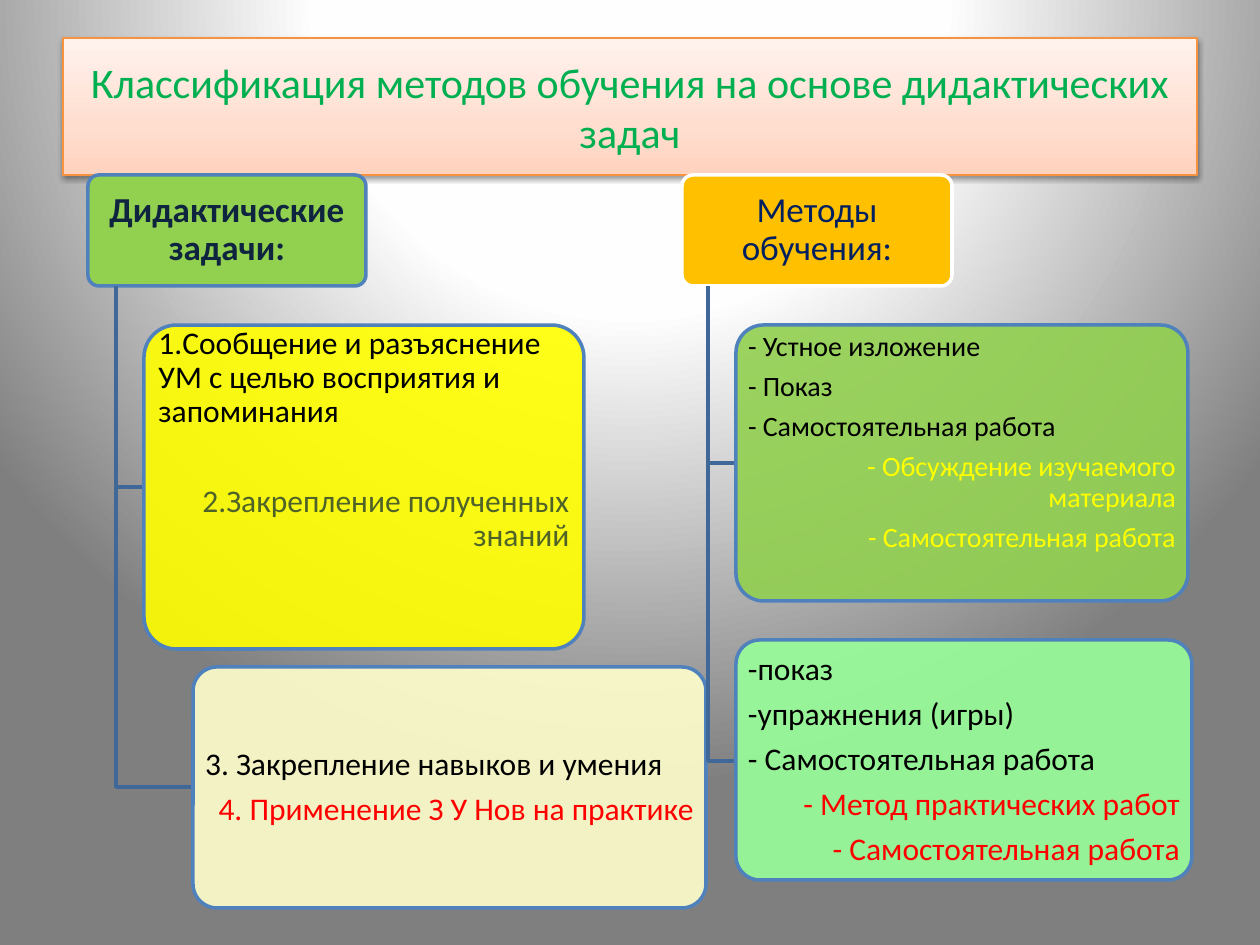
"""Build a slide that sorts teaching methods by didactic task."""
import pptx
import pptx.util
from lxml import etree
from pptx.dml.color import RGBColor
from pptx.enum.shapes import MSO_SHAPE
from pptx.enum.text import MSO_ANCHOR, PP_ALIGN
from pptx.oxml import parse_xml
from pptx.oxml.ns import qn

SCALE = 914400 / 126
NS = 'xmlns:a="http://schemas.openxmlformats.org/drawingml/2006/main"'
ALIGN = {"c": PP_ALIGN.CENTER, "l": PP_ALIGN.LEFT,
         "r": PP_ALIGN.RIGHT, "j": PP_ALIGN.JUSTIFY}
BLUE = "4F81BD"


def px(num):
    """Turn pixels into EMU."""
    return pptx.util.Emu(round(num * SCALE))


def paint(target, color):
    """Give a fill or a font one solid colour."""
    target.rgb = RGBColor.from_string(color)


def blend(fill, root, stops, tail):
    """Swap the fill under root for a gradient."""
    fill.solid()
    old = root.find(qn("a:solidFill"))
    marks = "".join(f'<a:gs pos="{pos * 1000}"><a:srgbClr val="{color}"/></a:gs>'
                    for pos, color in stops)
    root.replace(old, parse_xml(
        f'<a:gradFill {NS} rotWithShape="1"><a:gsLst>{marks}</a:gsLst>{tail}</a:gradFill>'))


def fade(shape, percent):
    """Set the opacity of a solid fill."""
    tone = shape._element.spPr.find(qn("a:solidFill"))[0]
    etree.SubElement(tone, qn("a:alpha"), val=str(percent * 1000))


def edge(shape, color, width):
    """Set the outline of a shape."""
    paint(shape.line.color, color)
    shape.line.width = pptx.util.Pt(width)


def write(shape, paras, size, pad, space=0.9, gap=None, bold=None):
    """Write paragraphs of (alignment, colour, words) into a shape."""
    frame = shape.text_frame
    frame.word_wrap = True
    frame.vertical_anchor = MSO_ANCHOR.MIDDLE
    (frame.margin_left, frame.margin_top,
     frame.margin_right, frame.margin_bottom) = map(px, pad)
    for spot, (align, color, words) in enumerate(paras):
        para = frame.add_paragraph() if spot else frame.paragraphs[0]
        para.alignment = ALIGN[align]
        para.line_spacing = space
        para.space_after = pptx.util.Pt(size * 0.35 if gap is None else gap)
        run = para.add_run()
        run.text = words
        run.font.name = "Calibri"
        run.font.size = pptx.util.Pt(size)
        run.font.bold = bold
        paint(run.font.color, color)


def card(slide, place, fill, line, paras, size, pad=(5, 4, 5, 4),
         clear=100, gap=None, bold=None):
    """Add a rounded card with text."""
    shape = slide.shapes.add_shape(MSO_SHAPE.ROUNDED_RECTANGLE, *map(px, place))
    shape.adjustments[0] = 0.1
    shape.shadow.inherit = False
    shape.fill.solid()
    paint(shape.fill.fore_color, fill)
    if clear < 100:
        fade(shape, clear)
    edge(shape, line, 2)
    write(shape, paras, size, pad, gap=gap, bold=bold)


def branch(slide, left, top, right, foot):
    """Add an L-shaped line from a head card to a child card."""
    pen = slide.shapes.build_freeform(left, top, SCALE)
    pen.add_line_segments([(left, foot), (right, foot)], close=False)
    shape = pen.convert_to_shape()
    shape.shadow.inherit = False
    shape.fill.background()
    edge(shape, "3F6797", 2)


def title(slide, words):
    """Add the title panel with its gradient and shadow."""
    shape = slide.shapes.add_shape(MSO_SHAPE.RECTANGLE, *map(px, (63, 38, 1134, 137)))
    blend(shape.fill, shape._element.spPr,
          [(0, "FFD2BD"), (35, "FFDED0"), (100, "FFF2ED")],
          '<a:lin ang="16200000" scaled="1"/>')
    edge(shape, "F69240", 0.75)
    shape._element.spPr.append(parse_xml(
        f'<a:effectLst {NS}><a:outerShdw blurRad="40000" dist="20000" dir="5400000" '
        'rotWithShape="0"><a:srgbClr val="000000"><a:alpha val="38000"/></a:srgbClr>'
        '</a:outerShdw></a:effectLst>'))
    write(shape, [("c", "00B050", words)], 24, (13, 6, 13, 6), space=1.0, gap=0)


def tasks(slide):
    """Add the column of didactic tasks."""
    card(slide, (88, 175, 278, 111), "92D050", BLUE,
         [("c", "0F243E", "Дидактические задачи:")], 20, bold=True)
    branch(slide, 116, 286, 144, 487)
    card(slide, (144, 325, 440, 324), "FFFF00", BLUE,
         [("l", "000000", "1.Сообщение и разъяснение УМ с целью восприятия и запоминания"),
          ("r", "4F6228", "2.Закрепление полученных знаний")],
         18, pad=(5, 0, 5, 94), clear=90, gap=32)
    branch(slide, 116, 286, 193, 787)
    card(slide, (193, 667, 513, 241), "FFFFCC", BLUE,
         [("l", "000000", "3. Закрепление навыков и умения"),
          ("r", "FF0000", "4. Применение З У Нов на практике")], 18, clear=90)


def methods(slide):
    """Add the column of teaching methods."""
    card(slide, (682, 175, 270, 111), "FFC000", "FFFFFF",
         [("c", "002060", "Методы обучения:")], 20)
    branch(slide, 708, 286, 736, 463)
    card(slide, (736, 325, 452, 276), "92D050", BLUE,
         [("j", "000000", "- Устное изложение"),
          ("j", "000000", "- Показ"),
          ("j", "000000", "- Самостоятельная работа"),
          ("r", "FFFF00", "- Обсуждение изучаемого материала"),
          ("r", "FFFF00", "- Самостоятельная работа")],
         16, pad=(4, 3, 4, 43), clear=90)
    branch(slide, 708, 286, 736, 761)
    card(slide, (736, 640, 456, 240), "99FF99", BLUE,
         [("j", "000000", "-показ"),
          ("j", "000000", "-упражнения (игры)"),
          ("j", "000000", "- Самостоятельная работа"),
          ("r", "FF0000", "- Метод практических работ"),
          ("r", "FF0000", "- Самостоятельная работа")], 18, clear=90)


def main():
    """Build and save the slide."""
    deck = pptx.Presentation()
    deck.slide_width, deck.slide_height = px(1260), px(945)
    slide = deck.slides.add_slide(deck.slide_layouts[6])
    fill = slide.background.fill
    fill.solid()
    blend(fill, slide._element.cSld.bg.bgPr,
          [(0, "FFFFFF"), (40, "FEFEFE"), (100, "7F7F7F")],
          '<a:path path="circle"><a:fillToRect l="50000" t="-80000" r="50000" b="180000"/></a:path>')
    title(slide, "Классификация методов обучения на основе дидактических задач")
    tasks(slide)
    methods(slide)
    deck.save("out.pptx")


if __name__ == "__main__":
    main()
